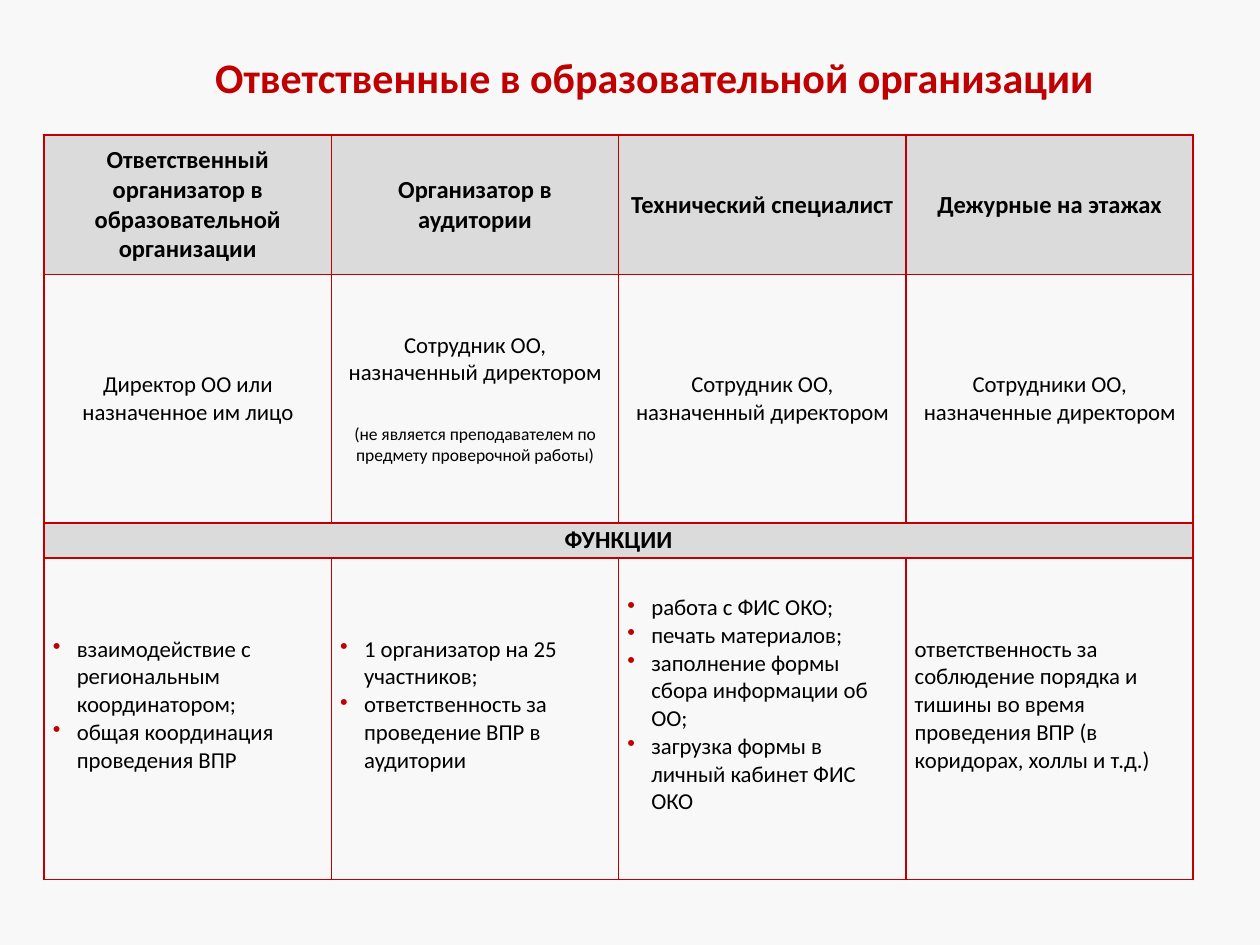
from lxml import etree
from pptx import Presentation
from pptx.dml.color import RGBColor
from pptx.enum.text import MSO_ANCHOR, PP_ALIGN
from pptx.oxml.ns import qn
from pptx.util import Inches, Pt

CENTER, LEFT = PP_ALIGN.CENTER, PP_ALIGN.LEFT
MIDDLE = MSO_ANCHOR.MIDDLE
FONT, RED, BLACK, GRAY, PAPER = "Calibri", "C00000", "000000", "DBDBDB", "F8F8F8"
ROW_HEIGHTS = (1.11, 1.97, 0.28, 2.55)
COL_WIDTH = 2.28

HEADERS = (
    "Ответственный организатор в образовательной организации",
    "Организатор в аудитории",
    "Технический специалист",
    "Дежурные на этажах",
)
STAFF = (
    ("Директор ОО или назначенное им лицо",),
    ("Сотрудник ОО, назначенный директором",
     "(не является преподавателем по предмету проверочной работы)"),
    ("Сотрудник ОО, назначенный директором",),
    ("Сотрудники ОО, назначенные директором",),
)
DUTIES = (
    ("взаимодействие с региональным координатором;",
     "общая координация проведения ВПР"),
    ("1 организатор на 25 участников;",
     "ответственность за проведение ВПР в аудитории"),
    ("работа с ФИС ОКО;", "печать материалов;",
     "заполнение формы сбора информации об ОО;",
     "загрузка формы в личный кабинет ФИС ОКО"),
    ("ответственность за соблюдение порядка и тишины во время",
     "проведения ВПР (в коридорах, холлы и т.д.)"),
)


def rgb(value):
    """Turn a hex string into a colour."""
    return RGBColor.from_string(value)


def apply(target, values):
    """Set each named attribute on the target."""
    for name, value in values.items():
        setattr(target, name, value)


def add_color(parent, tag, value):
    """Append an XML element that holds a plain colour."""
    holder = etree.SubElement(parent, qn(tag))
    etree.SubElement(holder, qn("a:srgbClr"), val=value)


def write(p, text, size, bold=False, color=BLACK, align=CENTER, after=0):
    """Fill a paragraph with one formatted run."""
    apply(p, {"alignment": align, "space_after": Pt(after), "space_before": Pt(0)})
    r = p.add_run()
    r.text = text
    apply(r.font, {"name": FONT, "size": Pt(size), "bold": bold})
    r.font.color.rgb = rgb(color)


def add_bullet(p):
    """Give a paragraph a red bullet and a hanging indent."""
    pPr = p._p.get_or_add_pPr()
    pPr.set("marL", str(Inches(0.19)))
    pPr.set("indent", str(-Inches(0.19)))
    add_color(pPr, "a:buClr", RED)
    etree.SubElement(pPr, qn("a:buChar"), char="•")


def format_cell(cell, fill=None, bottom=0):
    """Set margins, red borders and fill of a cell."""
    side = Inches(0.07)
    apply(cell, {"margin_left": side, "margin_right": side, "margin_top": 0,
                 "margin_bottom": Inches(bottom), "vertical_anchor": MIDDLE})
    tcPr = cell._tc.get_or_add_tcPr()
    for edge in ("a:lnL", "a:lnR", "a:lnT", "a:lnB"):
        line = etree.SubElement(tcPr, qn(edge), w=str(Pt(1)))
        add_color(line, "a:solidFill", RED)
    if fill:
        cell.fill.solid()
        cell.fill.fore_color.rgb = rgb(fill)
    else:
        cell.fill.background()


def fill_cell(cell, texts, sizes, bulleted=False, **style):
    """Write one paragraph per text into a cell."""
    tf = cell.text_frame
    for i, (text, size) in enumerate(zip(texts, sizes)):
        p = tf.add_paragraph() if i else tf.paragraphs[0]
        write(p, text, size, **style)
        if bulleted:
            add_bullet(p)


def add_title(s, text):
    """Place and format the slide title."""
    sp = s.shapes.title
    apply(sp, {"left": Inches(1.14), "top": Inches(0.21),
               "width": Inches(8.11), "height": Inches(0.79)})
    apply(sp.text_frame, {"vertical_anchor": MIDDLE, "word_wrap": True})
    write(sp.text_frame.paragraphs[0], text, 24, True, RED)


def add_staff_table(s):
    """Build the table of roles and their duties."""
    cols = len(HEADERS)
    table = s.shapes.add_table(
        len(ROW_HEIGHTS), cols, Inches(0.35), Inches(1.07),
        Inches(COL_WIDTH * cols), Inches(sum(ROW_HEIGHTS))).table
    apply(table, {"first_row": False, "horz_banding": False})
    for row, height in zip(table.rows, ROW_HEIGHTS):
        row.height = Inches(height)
    for c in range(cols):
        table.columns[c].width = Inches(COL_WIDTH)
        head, staff, band, duty = (table.cell(r, c) for r in range(len(ROW_HEIGHTS)))
        format_cell(head, GRAY)
        format_cell(staff)
        format_cell(band, GRAY)
        format_cell(duty, bottom=0.22)
        fill_cell(head, [HEADERS[c]], [14], bold=True)
        fill_cell(staff, STAFF[c], (13, 10), after=21)
        fill_cell(duty, DUTIES[c], [13] * len(DUTIES[c]),
                  bulleted=c < cols - 1, align=LEFT)
    table.cell(2, 0).merge(table.cell(2, cols - 1))
    fill_cell(table.cell(2, 0), ["ФУНКЦИИ"], [14], bold=True)


def main():
    """Create the slide and save it."""
    prs = Presentation()
    apply(prs, {"slide_width": Inches(10), "slide_height": Inches(7.5)})
    s = prs.slides.add_slide(prs.slide_layouts[5])
    s.background.fill.solid()
    s.background.fill.fore_color.rgb = rgb(PAPER)
    add_title(s, "Ответственные в образовательной организации")
    add_staff_table(s)
    prs.save("out.pptx")


if __name__ == "__main__":
    main()
